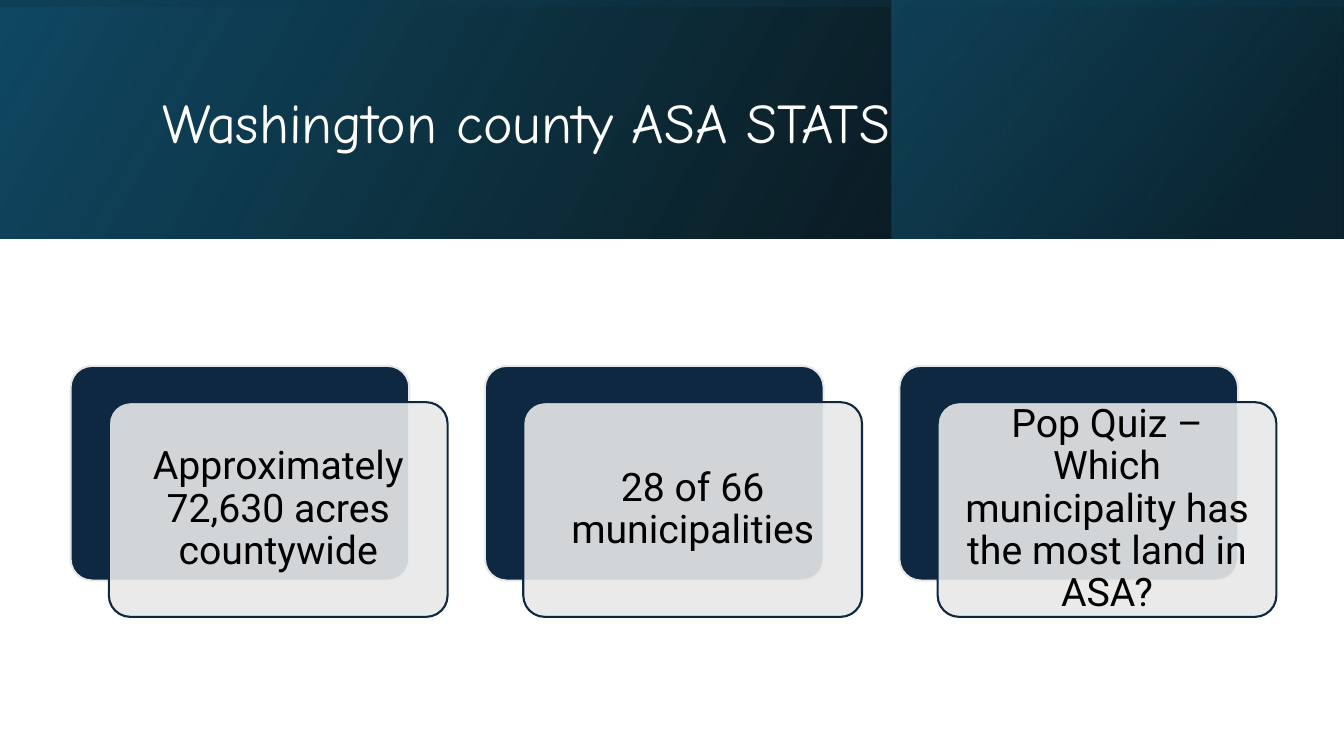
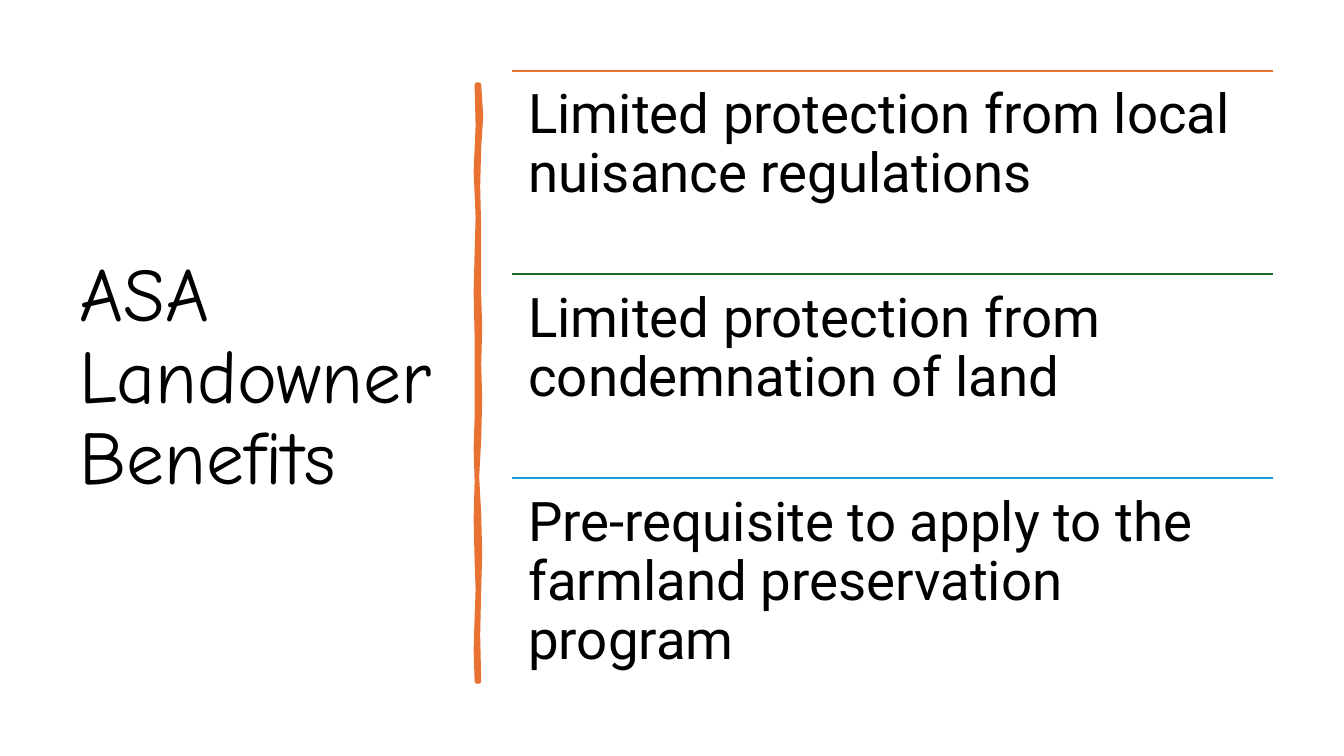
"""Build two slides about agricultural security areas."""
from dataclasses import dataclass

from lxml import etree
from pptx import Presentation
from pptx import util as u
from pptx.dml.color import RGBColor
from pptx.enum import shapes, text
from pptx.oxml.ns import qn
from pptx.presentation import Presentation as Deck
from pptx.shapes.autoshape import Shape
from pptx.slide import Slide
from pptx.text.text import TextFrame

BLACK = RGBColor(0x00, 0x00, 0x00)
WHITE = RGBColor(0xFF, 0xFF, 0xFF)
NAVY = RGBColor(0x0E, 0x28, 0x41)
PALE = RGBColor(0xE8, 0xE8, 0xE8)
DEEP_TEAL = RGBColor(0x10, 0x48, 0x62)
TEAL = RGBColor(0x15, 0x60, 0x82)
DARK_TEAL = RGBColor(0x0B, 0x30, 0x41)
ORANGE = RGBColor(0xE9, 0x71, 0x32)
GREEN = RGBColor(0x19, 0x6B, 0x24)
BLUE = RGBColor(0x0F, 0x9E, 0xD5)

TITLE_FONT = "Comic Neue"
BODY_FONT = "Roboto"
SLIDE_WIDTH, SLIDE_HEIGHT = 13.33, 7.5
BAND_HEIGHT = 2.37


@dataclass(frozen=True)
class Box:
    left: float
    top: float
    width: float
    height: float

    def lengths(self) -> tuple[u.Length, ...]:
        return tuple(u.Inches(v) for v in (self.left, self.top, self.width, self.height))


@dataclass(frozen=True)
class TextStyle:
    font: str
    size: int
    color: RGBColor = BLACK
    align: text.PP_ALIGN = text.PP_ALIGN.LEFT
    anchor: text.MSO_ANCHOR = text.MSO_ANCHOR.MIDDLE
    inset: float = 0.1


@dataclass(frozen=True)
class Stop:
    position: float
    color: RGBColor
    opacity: int


@dataclass(frozen=True)
class Band:
    left: float
    width: float
    angle: int
    stops: tuple[Stop, Stop]


@dataclass(frozen=True)
class Benefit:
    wording: str
    color: RGBColor


BANDS = (
    Band(0, SLIDE_WIDTH, 330, (Stop(0, DEEP_TEAL, 100), Stop(1, BLACK, 96))),
    Band(8.84, 4.48, 320, (Stop(0, TEAL, 48), Stop(0.81, DARK_TEAL, 68))),
    Band(0, SLIDE_WIDTH, 260, (Stop(0.23, DEEP_TEAL, 16), Stop(0.99, BLACK, 45))),
)
FACTS = (
    "Approximately 72,630 acres countywide",
    "28 of 66 municipalities",
    "Pop Quiz – Which municipality has the most land in ASA?",
)
BENEFITS = (
    Benefit("Limited protection from local nuisance regulations", ORANGE),
    Benefit("Limited protection from condemnation of land", GREEN),
    Benefit("Pre-requisite to apply to the farmland preservation program", BLUE),
)
RIGHT_EDGE = (
    (4.75, 0.84), (4.77, 1.15), (4.75, 1.46), (4.74, 1.85), (4.75, 2.26),
    (4.75, 2.94), (4.76, 3.25), (4.75, 3.62), (4.76, 3.95), (4.75, 4.36),
    (4.73, 4.73), (4.75, 5.1), (4.76, 5.5), (4.75, 5.84), (4.74, 6.3), (4.75, 6.76),
)
LEFT_EDGE = (
    (4.73, 6.76), (4.72, 6.45), (4.73, 6.13), (4.74, 5.85), (4.73, 5.57),
    (4.72, 5.15), (4.73, 4.77), (4.72, 4.45), (4.73, 4.15), (4.73, 3.35),
    (4.72, 2.9), (4.73, 2.5), (4.74, 2.15), (4.72, 1.7), (4.74, 1.25), (4.73, 0.84),
)
CARD_STYLE = TextStyle(BODY_FONT, 28, align=text.PP_ALIGN.CENTER, inset=0.18)
BENEFIT_STYLE = TextStyle(BODY_FONT, 39, anchor=text.MSO_ANCHOR.TOP, inset=0.16)


def write(frame: TextFrame, wording: str, style: TextStyle) -> None:
    """Put one styled run in a text frame."""
    frame.word_wrap = True
    frame.auto_size = text.MSO_AUTO_SIZE.NONE
    frame.vertical_anchor = style.anchor
    frame.margin_left = frame.margin_right = u.Inches(style.inset)
    frame.margin_top = frame.margin_bottom = u.Inches(min(style.inset, 0.18))
    paragraph = frame.paragraphs[0]
    paragraph.alignment = style.align
    paragraph.line_spacing = 0.9
    run = paragraph.add_run()
    run.text = wording
    run.font.name = style.font
    run.font.size = u.Pt(style.size)
    run.font.color.rgb = style.color


def set_opacity(shape: Shape, percentages: list[int]) -> None:
    """Set the opacity of each fill colour in turn."""
    colors = list(shape.element.spPr.iter(qn("a:srgbClr")))
    for color, percentage in zip(colors, percentages):
        etree.SubElement(color, qn("a:alpha")).set("val", str(percentage * 1000))


def add_titled_slide(presentation: Deck, title: str, box: Box, size: int, color: RGBColor) -> Slide:
    """Add a title-only slide with a formatted title."""
    slide = presentation.slides.add_slide(presentation.slide_layouts[5])
    placeholder = slide.shapes.title
    placeholder.left, placeholder.top, placeholder.width, placeholder.height = box.lengths()
    write(placeholder.text_frame, title, TextStyle(TITLE_FONT, size, color))
    return slide


def add_band(slide: Slide, band: Band) -> None:
    """Draw a gradient band behind the title."""
    box = Box(band.left, 0, band.width, BAND_HEIGHT)
    shape = slide.shapes.add_shape(shapes.MSO_SHAPE.RECTANGLE, *box.lengths())
    shape.shadow.inherit = False
    shape.fill.gradient()
    shape.fill.gradient_angle = band.angle
    for gradient_stop, stop in zip(shape.fill.gradient_stops, band.stops):
        gradient_stop.position = stop.position
        gradient_stop.color.rgb = stop.color
    set_opacity(shape, [stop.opacity for stop in band.stops])
    shape.line.fill.background()


def add_panel(slide: Slide, box: Box, fill: RGBColor, line: RGBColor, opacity: int = 100) -> Shape:
    """Draw a rounded panel."""
    shape = slide.shapes.add_shape(shapes.MSO_SHAPE.ROUNDED_RECTANGLE, *box.lengths())
    shape.adjustments[0] = 0.1
    shape.shadow.inherit = False
    shape.fill.solid()
    shape.fill.fore_color.rgb = fill
    set_opacity(shape, [opacity])
    shape.line.color.rgb = line
    shape.line.width = u.Pt(1.5)
    return shape


def add_card(slide: Slide, left: float, fact: str) -> None:
    """Draw a fact panel over its offset backing."""
    add_panel(slide, Box(left, 3.63, 3.36, 2.13), NAVY, PALE)
    front = add_panel(slide, Box(left + 0.38, 3.99, 3.36, 2.13), PALE, NAVY, 90)
    write(front.text_frame, fact, CARD_STYLE)


def add_brush_stroke(slide: Slide) -> None:
    """Draw the uneven vertical divider."""
    points = [(u.Inches(x), u.Inches(y)) for x, y in RIGHT_EDGE + LEFT_EDGE]
    builder = slide.shapes.build_freeform(*points[0])
    builder.add_line_segments(points[1:], close=True)
    stroke = builder.convert_to_shape()
    stroke.shadow.inherit = False
    stroke.fill.solid()
    stroke.fill.fore_color.rgb = ORANGE
    stroke.line.color.rgb = ORANGE
    stroke.line.width = u.Pt(3.25)


def add_benefit(slide: Slide, box: Box, benefit: Benefit) -> None:
    """Draw a benefit under its coloured rule."""
    left, top, width, height = box.lengths()
    rule = slide.shapes.add_connector(shapes.MSO_CONNECTOR.STRAIGHT, left, top, left + width, top)
    rule.line.color.rgb = benefit.color
    rule.line.width = u.Pt(1.5)
    etree.SubElement(rule.element.spPr, qn("a:effectLst"))
    label = slide.shapes.add_textbox(left, top, width, height)
    write(label.text_frame, benefit.wording, BENEFIT_STYLE)


def build_stats(presentation: Deck) -> None:
    """Build the county statistics slide."""
    slide = add_titled_slide(
        presentation, "Washington county ASA STATS", Box(1.51, 0.38, 10.63, 1.72), 40, WHITE
    )
    for band in BANDS:
        add_band(slide, band)
    title = slide.shapes.title.element
    title.getparent().append(title)
    for index, fact in enumerate(FACTS):
        add_card(slide, 0.7 + index * 4.11, fact)


def build_benefits(presentation: Deck) -> None:
    """Build the landowner benefits slide."""
    slide = add_titled_slide(
        presentation, "ASA Landowner Benefits", Box(0.69, 0.7, 3.74, 6.11), 54, BLACK
    )
    add_brush_stroke(slide)
    for index, benefit in enumerate(BENEFITS):
        add_benefit(slide, Box(5.08, 0.7 + index * 2.02, 7.55, 2.02), benefit)


def main() -> None:
    """Build and save the presentation."""
    presentation = Presentation()
    presentation.slide_width = u.Inches(SLIDE_WIDTH)
    presentation.slide_height = u.Inches(SLIDE_HEIGHT)
    build_stats(presentation)
    build_benefits(presentation)
    presentation.save("out.pptx")


if __name__ == "__main__":
    main()
